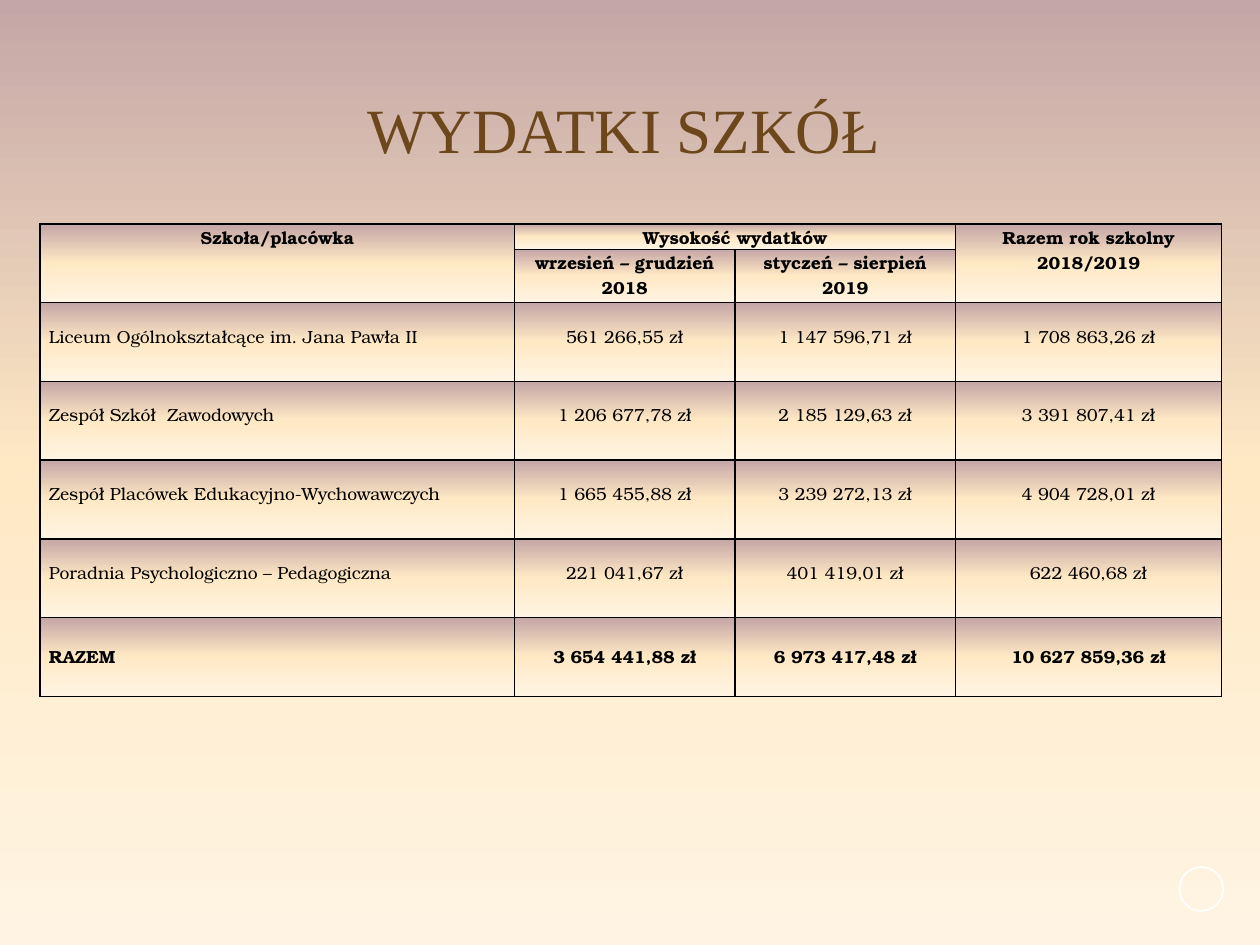
from lxml import etree
from pptx import Presentation
from pptx import oxml as ox
from pptx.dml.color import RGBColor
from pptx.enum import shapes, text
from pptx.oxml import ns
from pptx.util import Pt

C = {"mauve": "C4A6A6", "sand": "FFE9C5", "cream": "FFF4E3",
     "brown": "6B471B", "black": "000000", "white": "FFFFFF"}


def gradient():
    stops = "".join(
        f'<a:gs pos="{pos}"><a:srgbClr val="{C[name]}"/></a:gs>'
        for pos, name in ((0, "mauve"), (50000, "sand"), (100000, "cream")))
    return ox.parse_xml(
        f'<a:gradFill {ns.nsdecls("a")} rotWithShape="1"><a:gsLst>{stops}</a:gsLst>'
        '<a:lin ang="5400000" scaled="0"/></a:gradFill>')


def style(p, font, size, color, bold, align):
    p.alignment = align
    p.font.name = font
    p.font.size = Pt(size)
    p.font.bold = bold
    p.font.color.rgb = RGBColor.from_string(C[color])


prs = Presentation()
prs.slide_width, prs.slide_height = Pt(720), Pt(540)
s = prs.slides.add_slide(prs.slide_layouts[6])
s.background.fill.solid()
bg = s.element.xpath(".//p:bgPr")[0]
bg.replace(bg[0], gradient())

ring = s.shapes.add_shape(shapes.MSO_SHAPE.OVAL, Pt(674), Pt(495.5), Pt(25), Pt(25))
ring.shadow.inherit = False
ring.fill.background()
ring.line.color.rgb = RGBColor.from_string(C["white"])
ring.line.width = Pt(1)

title = s.shapes.add_textbox(Pt(14.4), Pt(43), Pt(684), Pt(66))
tf = title.text_frame
tf.word_wrap = True
tf.vertical_anchor = text.MSO_ANCHOR.MIDDLE
p = tf.paragraphs[0]
p.text = "WYDATKI SZKÓŁ"
p.line_spacing = 0.9
style(p, "Times New Roman", 36, "brown", False, text.PP_ALIGN.CENTER)

rows = [
    ["Szkoła/placówka", "Wysokość wydatków", "", "Razem rok szkolny\n2018/2019"],
    ["", "wrzesień – grudzień\n2018", "styczeń – sierpień\n2019", ""],
    ["Liceum Ogólnokształcące im. Jana Pawła II",
     "561 266,55 zł", "1 147 596,71 zł", "1 708 863,26 zł"],
    ["Zespół Szkół  Zawodowych",
     "1 206 677,78 zł", "2 185 129,63 zł", "3 391 807,41 zł"],
    ["Zespół Placówek Edukacyjno-Wychowawczych",
     "1 665 455,88 zł", "3 239 272,13 zł", "4 904 728,01 zł"],
    ["Poradnia Psychologiczno – Pedagogiczna",
     "221 041,67 zł", "401 419,01 zł", "622 460,68 zł"],
    ["RAZEM", "3 654 441,88 zł", "6 973 417,48 zł", "10 627 859,36 zł"],
]
widths = [271, 126, 126, 152]
heights = [14.5, 30.5] + [45] * 5
total = len(rows) - 1

tbl = s.shapes.add_table(len(rows), len(widths), Pt(23), Pt(128),
                         Pt(sum(widths)), Pt(sum(heights))).table
tbl.first_row = False
tbl.horz_banding = False
for col, w in zip(tbl.columns, widths):
    col.width = Pt(w)
for row, h in zip(tbl.rows, heights):
    row.height = Pt(h)

for i, row in enumerate(rows):
    header = i < 2
    for j, value in enumerate(row):
        cell = tbl.cell(i, j)
        cell.margin_left = cell.margin_right = Pt(5)
        cell.margin_top = Pt(0 if header else 14.5 if i == total else 12.5)
        cell.margin_bottom = Pt(0)
        cell.text = value
        left = j == 0 and not header
        for p in cell.text_frame.paragraphs:
            style(p, "TeX Gyre Bonum", 10, "black", header or i == total,
                  text.PP_ALIGN.LEFT if left else text.PP_ALIGN.CENTER)
        tcPr = cell._tc.get_or_add_tcPr()
        for side in ("lnL", "lnR", "lnT", "lnB"):
            ln = etree.SubElement(tcPr, ns.qn(f"a:{side}"), w=str(Pt(1)))
            fill = etree.SubElement(ln, ns.qn("a:solidFill"))
            etree.SubElement(fill, ns.qn("a:srgbClr"), val=C["black"])
        tcPr.append(gradient())

for first, last in (((0, 0), (1, 0)), ((0, 1), (0, 2)), ((0, 3), (1, 3))):
    tbl.cell(*first).merge(tbl.cell(*last))

prs.save("out.pptx")
